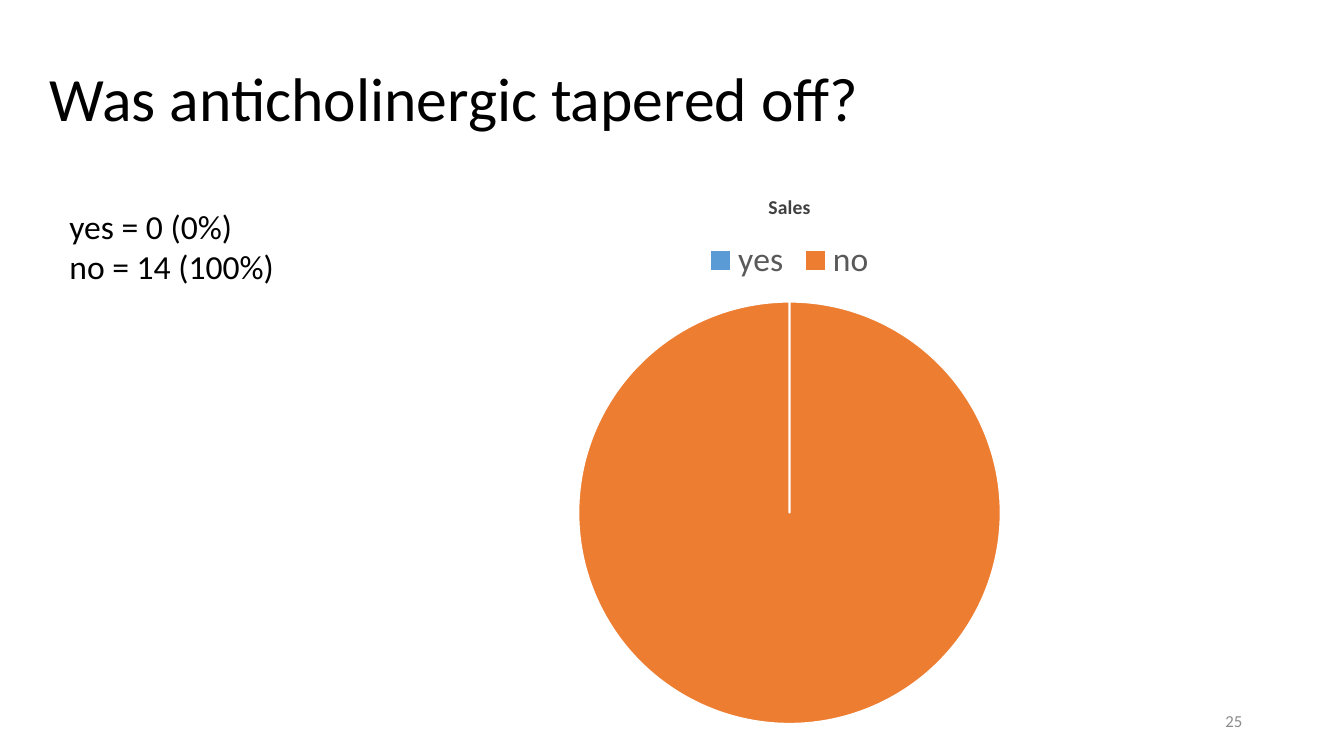
import pptx
import pptx.chart.data
import pptx.dml.color
import pptx.enum.chart
import pptx.enum.text
import pptx.util

WIDTH = pptx.util.Inches(13.33)
HEIGHT = pptx.util.Inches(7.5)
COLUMNS = ROWS = 100
FONT = "Calibri"
COLORS = {
    "text": "000000",
    "chart_title": "404040",
    "legend": "595959",
    "page_number": "8C8C8C",
    "separator": "FFFFFF",
    "yes": "5B9BD5",
    "no": "ED7D31",
}
ANSWERS = {"yes": 0, "no": 100}
ALIGN = pptx.enum.text.PP_ALIGN
ANCHOR = pptx.enum.text.MSO_ANCHOR


def color(name):
    return pptx.dml.color.RGBColor.from_string(COLORS[name])


def grid_box(column, row, column_span, row_span):
    return (
        round(WIDTH * column / COLUMNS),
        round(HEIGHT * row / ROWS),
        round(WIDTH * column_span / COLUMNS),
        round(HEIGHT * row_span / ROWS),
    )


def style_font(font, size, color_name, bold=False):
    font.name = FONT
    font.size = pptx.util.Pt(size)
    font.bold = bold
    font.color.rgb = color(color_name)


def write_lines(frame, lines, size, color_name, alignment=ALIGN.LEFT, anchor=ANCHOR.TOP):
    frame.word_wrap = True
    frame.auto_size = pptx.enum.text.MSO_AUTO_SIZE.NONE
    frame.vertical_anchor = anchor
    for index, line in enumerate(lines):
        paragraph = frame.add_paragraph() if index else frame.paragraphs[0]
        paragraph.alignment = alignment
        run = paragraph.add_run()
        run.text = line
        style_font(run.font, size, color_name)


def add_title(slide, box, text):
    title = slide.shapes.title
    title.left, title.top, title.width, title.height = box
    write_lines(title.text_frame, [text], 44, "text", anchor=ANCHOR.MIDDLE)
    title.text_frame.paragraphs[0].line_spacing = 0.9


def add_text(slide, box, lines, size, color_name, **layout):
    shape = slide.shapes.add_textbox(*box)
    write_lines(shape.text_frame, lines, size, color_name, **layout)


def add_answer_pie(slide, box):
    data = pptx.chart.data.CategoryChartData()
    data.categories = list(ANSWERS)
    data.add_series("Sales", list(ANSWERS.values()))
    chart = slide.shapes.add_chart(pptx.enum.chart.XL_CHART_TYPE.PIE, *box, data).chart
    style_font(chart.font, 10, "text")

    chart.has_title = True
    run = chart.chart_title.text_frame.paragraphs[0].add_run()
    run.text = "Sales"
    style_font(run.font, 14, "chart_title", bold=True)

    chart.has_legend = True
    chart.legend.position = pptx.enum.chart.XL_LEGEND_POSITION.TOP
    chart.legend.include_in_layout = False
    style_font(chart.legend.font, 24, "legend")

    plot = chart.plots[0]
    plot.vary_by_categories = True
    for index, answer in enumerate(ANSWERS):
        slice_format = plot.series[0].points[index].format
        slice_format.fill.solid()
        slice_format.fill.fore_color.rgb = color(answer)
        slice_format.line.color.rgb = color("separator")
        slice_format.line.width = pptx.util.Pt(1.5)


def main():
    presentation = pptx.Presentation()
    presentation.slide_width = WIDTH
    presentation.slide_height = HEIGHT
    slide = presentation.slides.add_slide(presentation.slide_layouts[5])
    add_title(slide, grid_box(2.93, 3.87, 90.17, 19.07), "Was anticholinergic tapered off?")
    add_answer_pie(slide, grid_box(24.31, 22.93, 68.87, 74.67))
    add_text(
        slide, grid_box(4.43, 26.53, 20.71, 17.47),
        ["yes = 0 (0%)", "no = 14 (100%)"], 24, "text",
    )
    add_text(
        slide, grid_box(70.67, 92.67, 22.51, 5.33), ["25"], 12, "page_number",
        alignment=ALIGN.RIGHT, anchor=ANCHOR.MIDDLE,
    )
    presentation.save("out.pptx")


if __name__ == "__main__":
    main()
